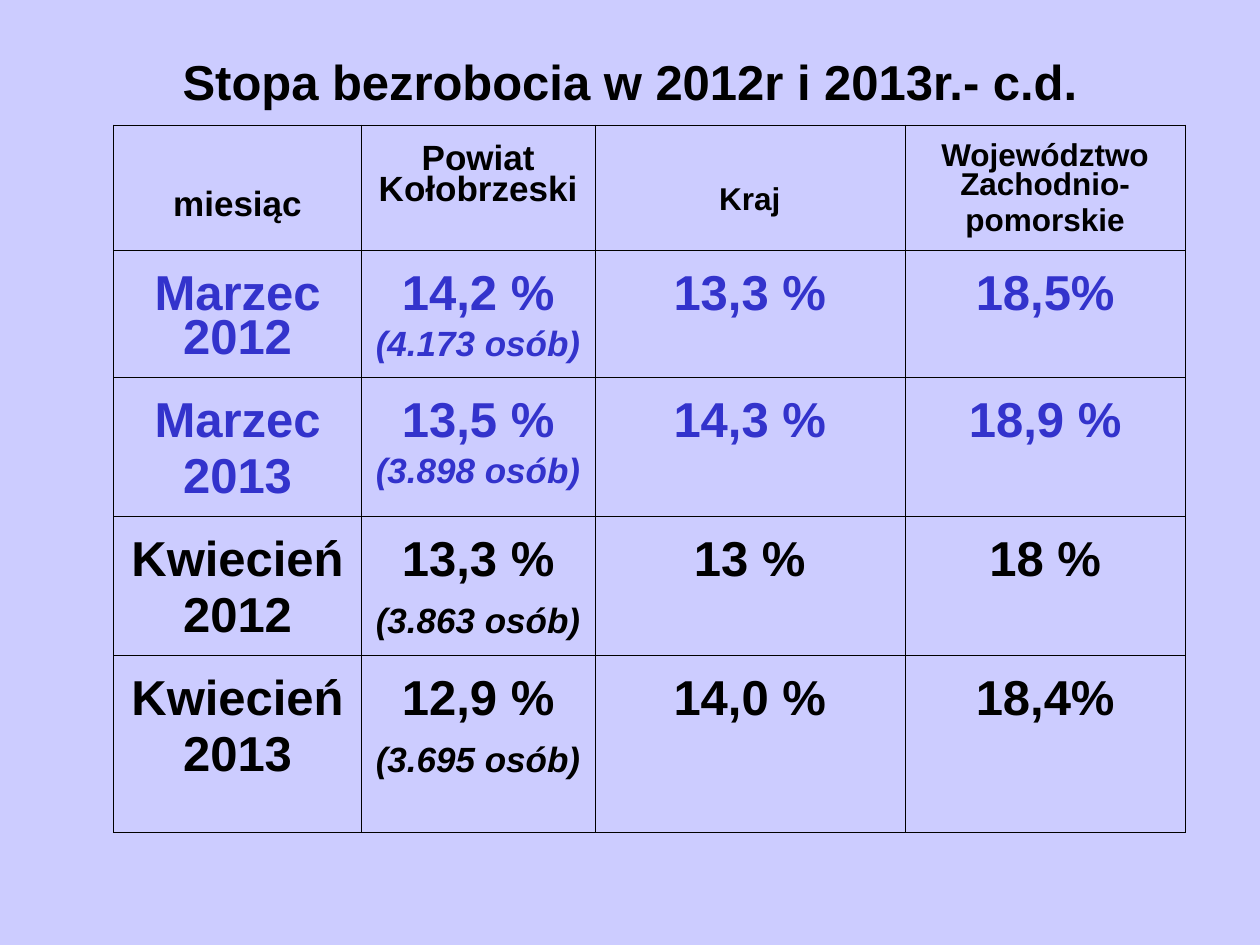
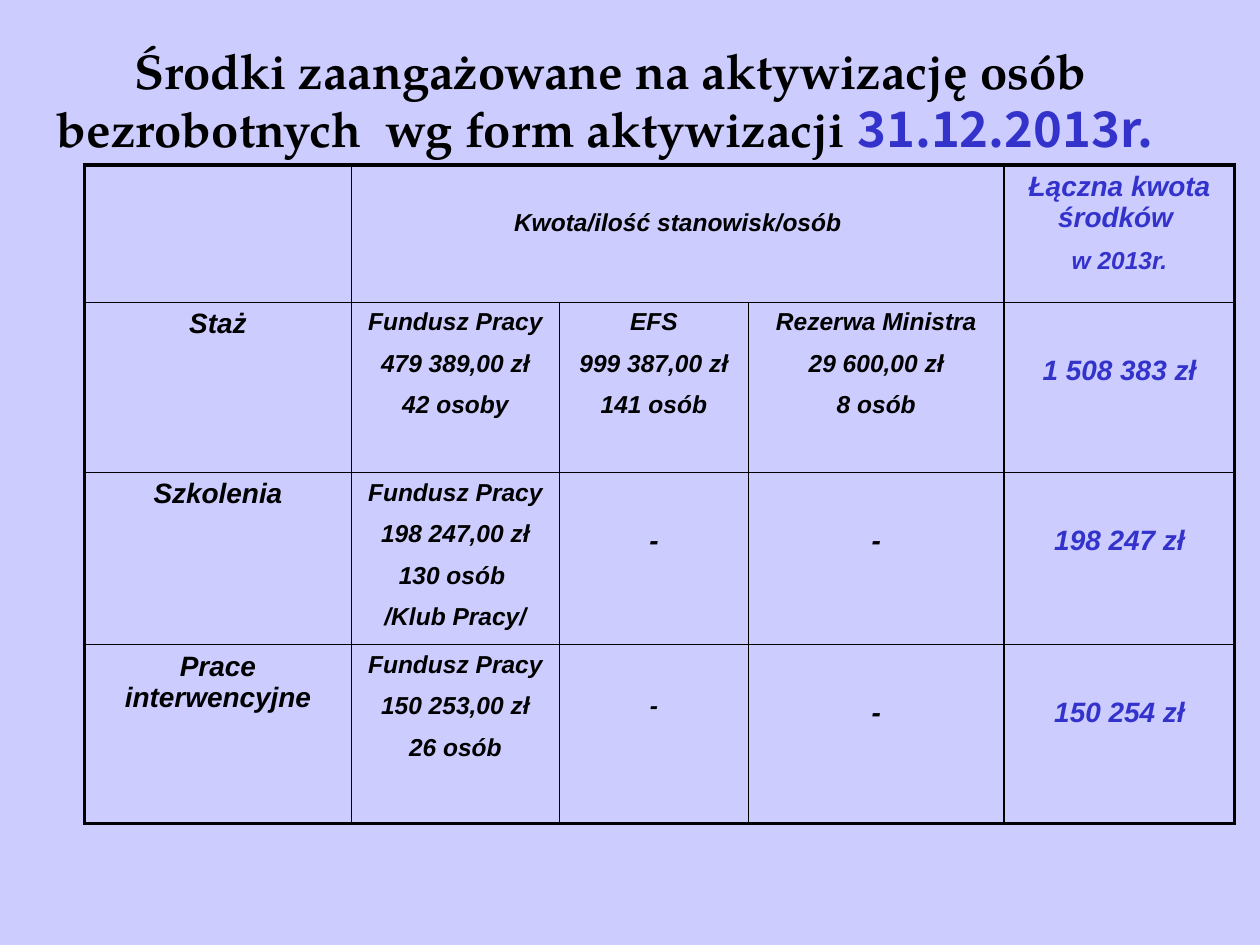
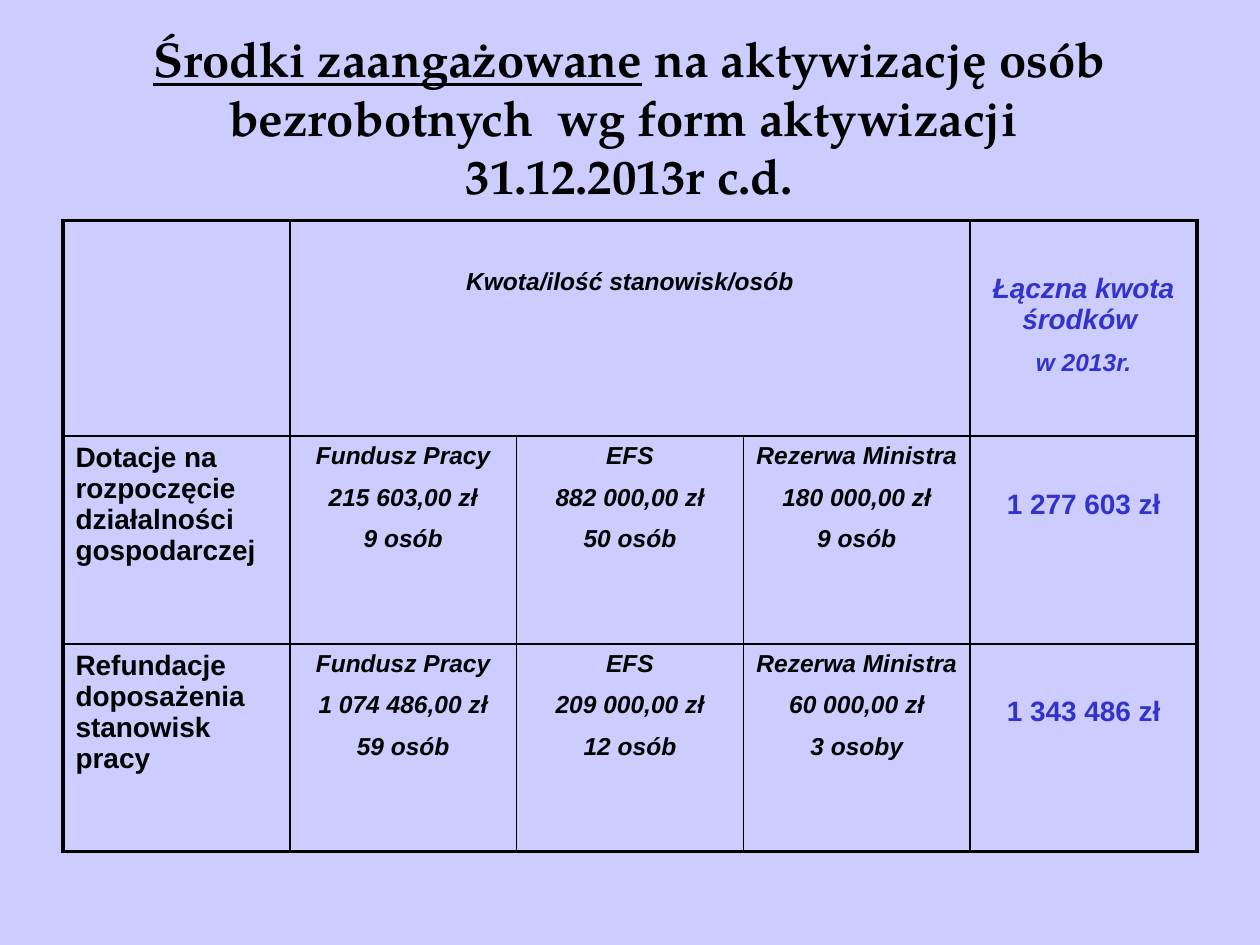
from lxml.etree import SubElement
from pptx import Presentation
from pptx.dml.color import RGBColor
from pptx.enum.text import MSO_ANCHOR, PP_ALIGN
from pptx.oxml.ns import qn
from pptx.util import Inches, Pt

COLORS = {"background": "CCCCFF", "text": "000000", "accent": "3333CC"}
BODY_FONT = "Arial"
TITLE_FONT = "TeX Gyre Pagella"
DATE_FONT = "Noto Sans CJK KR"
TITLE_SIZE = 28


def style_span(span, size, color="text", font=BODY_FONT, italic=False, underline=False):
    span.font.size = Pt(size)
    span.font.name = font
    span.font.bold = True
    span.font.italic = italic
    span.font.underline = underline
    span.font.color.rgb = RGBColor.from_string(COLORS[color])


def write_cell(cell, lines, sizes, color="text", italic=False, top=0.05,
               before=8, spacing=1.0, align=PP_ALIGN.CENTER):
    """Write one paragraph per line; the last size serves the remaining lines."""
    cell.margin_top = Inches(top)
    cell.text_frame.text = "\n".join(lines)
    for index, para in enumerate(cell.text_frame.paragraphs):
        para.alignment = align
        para.space_before = Pt(before)
        para.line_spacing = spacing
        for span in para.runs:
            style_span(span, sizes[min(index, len(sizes) - 1)], color, italic=italic)


deck = Presentation()
deck.slide_width, deck.slide_height = Inches(10), Inches(7.5)

# Titles are (text, colour, font, underline); None is a line break
SHEETS = [
    {
        "title_box": (0.5, 0.3, 9, 0.69),
        "title": [("Stopa bezrobocia w 2012r i 2013r.- c.d.", "text", BODY_FONT, False)],
        "origin": (0.9, 0.99),
        "columns": [1.97, 1.85, 2.46, 2.23],
        "rows": [0.95, 0.95, 1.05, 1.05, 1.41],
        "outer": 0.23, "inner": 0.11,
    },
    {
        "title_box": (0.35, 0, 8.99, 1.57),
        "title": [
            ("Środki zaangażowane na aktywizację osób bezrobotnych  wg form aktywizacji ",
             "text", TITLE_FONT, False),
            ("31.12.2013r. ", "accent", DATE_FONT, False),
        ],
        "origin": (0.67, 1.31),
        "columns": [2.12, 1.65, 1.5, 2.03, 1.83],
        "rows": [1.09, 1.35, 1.31, 1.42],
        "outer": 2.25, "inner": 1,
    },
    {
        "title_box": (0.5, 0.14, 8.99, 1.57),
        "title": [
            ("Środki zaangażowane", "text", TITLE_FONT, True),
            (" na aktywizację osób bezrobotnych  wg form aktywizacji ",
             "text", TITLE_FONT, False),
            None,
            ("31.12.2013r c.d.", "text", TITLE_FONT, False),
        ],
        "origin": (0.5, 1.75),
        "columns": [1.8] * 5,
        "rows": [1.71, 1.65, 1.65],
        "outer": 2.25, "inner": 1,
    },
]

# Background, title and empty ruled table of every slide
tables = []
for sheet in SHEETS:
    page = deck.slides.add_slide(deck.slide_layouts[6])
    page.background.fill.solid()
    page.background.fill.fore_color.rgb = RGBColor.from_string(COLORS["background"])

    box = page.shapes.add_textbox(*[Inches(length) for length in sheet["title_box"]])
    box.text_frame.word_wrap = True
    box.text_frame.vertical_anchor = MSO_ANCHOR.MIDDLE
    para = box.text_frame.paragraphs[0]
    para.alignment = PP_ALIGN.CENTER
    for part in sheet["title"]:
        if part is None:
            para.add_line_break()
            continue
        text, color, font, underline = part
        span = para.add_run()
        span.text = text
        style_span(span, TITLE_SIZE, color, font, underline=underline)

    widths, heights = sheet["columns"], sheet["rows"]
    left, top = sheet["origin"]
    table = page.shapes.add_table(
        len(heights), len(widths), Inches(left), Inches(top),
        Inches(sum(widths)), Inches(sum(heights))).table
    table.first_row = table.horz_banding = False
    for column, width in zip(table.columns, widths):
        column.width = Inches(width)
    for row, height in zip(table.rows, heights):
        row.height = Inches(height)

    for r in range(len(heights)):
        for c in range(len(widths)):
            cell = table.cell(r, c)
            properties = cell._tc.get_or_add_tcPr()
            edges = {"a:lnL": c == 0, "a:lnR": c == len(widths) - 1,
                     "a:lnT": r == 0, "a:lnB": r == len(heights) - 1}
            for tag, is_outer in edges.items():
                weight = sheet["outer"] if is_outer else sheet["inner"]
                line = SubElement(properties, qn(tag), w=str(int(Pt(weight))))
                fill = SubElement(line, qn("a:solidFill"))
                SubElement(fill, qn("a:srgbClr"), val=COLORS["text"])
            cell.fill.background()
    tables.append(table)

# Slide 1: unemployment rates
rates, *funding_tables = tables
TIGHT = 0.81
RATE_HEADERS = [
    (["miesiąc"], 20, 0.53),
    (["Powiat Kołobrzeski"], 20, 0.16),
    (["Kraj"], 18, 0.5),
    (["Województwo Zachodnio-", "pomorskie"], 18, 0.15),
]
for c, (lines, size, top) in enumerate(RATE_HEADERS):
    write_cell(rates.cell(0, c), lines, [size], top=top, before=4.5, spacing=TIGHT)

# Month lines, county rate, people, country, voivodeship, colour, space above people
RATES = [
    (["Marzec 2012"], "14,2 %", "(4.173 osób)", "13,3 %", "18,5%", "accent", 7),
    (["Marzec", "2013"], "13,5 %", "(3.898 osób)", "14,3 %", "18,9 %", "accent", 7),
    (["Kwiecień", "2012"], "13,3 %", "(3.863 osób)", "13 %", "18 %", "text", 13),
    (["Kwiecień ", "2013"], "12,9 %", "(3.695 osób)", "14,0 %", "18,4%", "text", 13),
]
for r, (month, county, people, country, region, color, gap) in enumerate(RATES, 1):
    for c, lines in enumerate([month, [county, people], [country], [region]]):
        sizes = [28, 20] if c == 1 else [28]
        write_cell(rates.cell(r, c), lines, sizes, color, top=0.2, before=7, spacing=TIGHT)
    people_para = rates.cell(r, 1).text_frame.paragraphs[1]
    people_para.space_before = Pt(gap)
    people_para.runs[0].font.italic = True

# Slides 2 and 3: funds by form of support
LOWERED = 0.42
FUNDING = [
    {
        "header_tops": (0.35, 0.05), "label_align": PP_ALIGN.CENTER, "italic": True,
        "rows": [
            ("Staż", ["Fundusz Pracy", "479 389,00 zł", "42 osoby"],
             ["EFS", "999 387,00 zł", "141 osób"],
             ["Rezerwa Ministra", "29 600,00 zł", "8 osób"], "1 508 383 zł"),
            ("Szkolenia", ["Fundusz Pracy", "198 247,00 zł", "130 osób ", "/Klub Pracy/"],
             ["-"], ["-"], "198 247 zł"),
            ("Prace interwencyjne", ["Fundusz Pracy", "150 253,00 zł", "26 osób"],
             ["-"], ["-"], "150 254 zł"),
        ],
    },
    {
        "header_tops": (0.38, LOWERED), "label_align": PP_ALIGN.LEFT, "italic": False,
        "rows": [
            ("Dotacje na rozpoczęcie działalności gospodarczej",
             ["Fundusz Pracy", "215 603,00 zł", "9 osób"],
             ["EFS", "882 000,00 zł", "50 osób"],
             ["Rezerwa Ministra", "180 000,00 zł", "9 osób"], "1 277 603 zł"),
            ("Refundacje doposażenia stanowisk pracy",
             ["Fundusz Pracy", "1 074 486,00 zł", "59 osób"],
             ["EFS", "209 000,00 zł", "12 osób"],
             ["Rezerwa Ministra", "60 000,00 zł", "3 osoby"], "1 343 486 zł"),
        ],
    },
]
for table, funding in zip(funding_tables, FUNDING):
    amount_top, total_top = funding["header_tops"]
    italic = funding["italic"]
    table.cell(0, 1).merge(table.cell(0, 3))
    write_cell(table.cell(0, 1), ["Kwota/ilość stanowisk/osób"], [14],
               italic=True, top=amount_top)
    write_cell(table.cell(0, 4), ["Łączna kwota środków ", "w 2013r."], [16, 14],
               "accent", italic=True, top=total_top)
    for r, (label, *sources, total) in enumerate(funding["rows"], 1):
        write_cell(table.cell(r, 0), [label], [16], italic=italic,
                   align=funding["label_align"])
        for c, lines in enumerate(sources, 1):
            size, top = (16, LOWERED) if lines == ["-"] else (14, 0.05)
            if (r, c) == (3, 2):
                size, top = 14, 0.38
            write_cell(table.cell(r, c), lines, [size], italic=True, top=top)
        write_cell(table.cell(r, 4), [total], [16], "accent", italic=italic, top=LOWERED)

deck.save("out.pptx")
